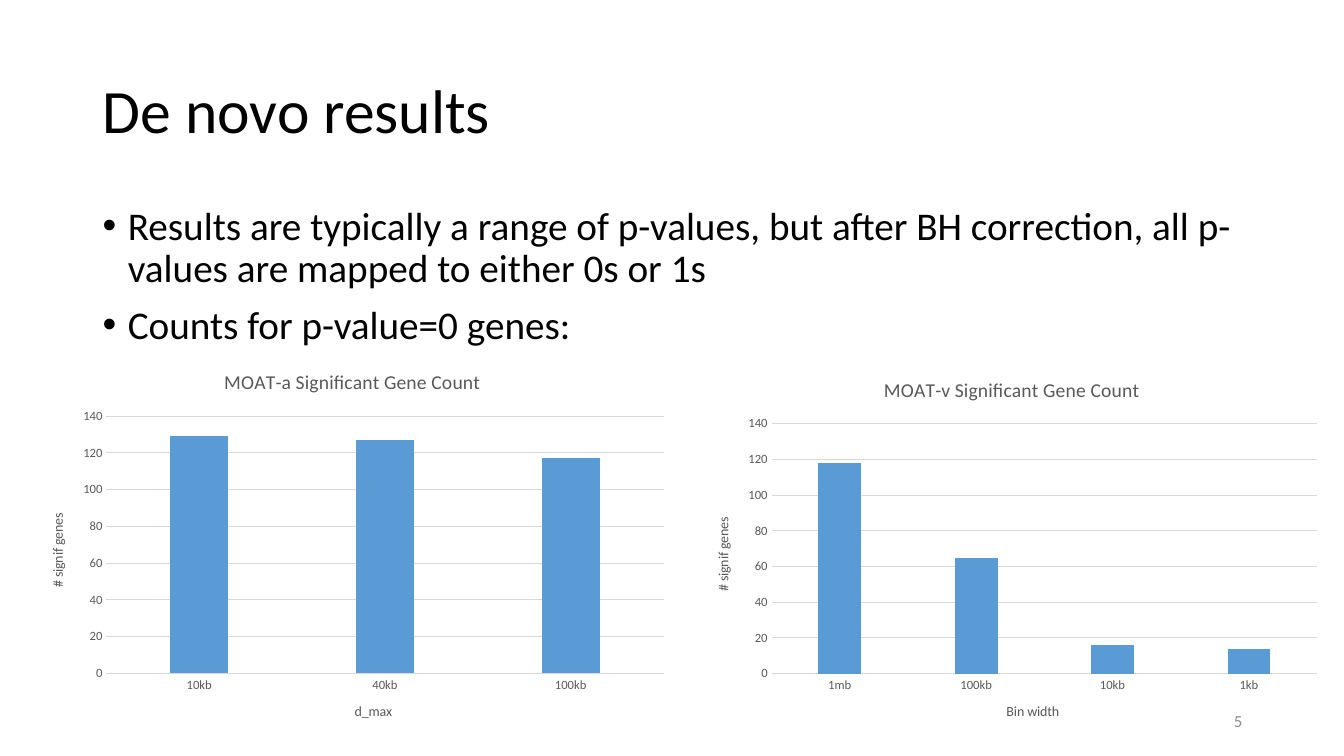
from lxml.etree import SubElement
from pptx import Presentation
from pptx.chart.data import CategoryChartData
from pptx.dml.color import RGBColor
from pptx.enum.chart import XL_CHART_TYPE, XL_TICK_MARK
from pptx.enum.text import MSO_ANCHOR, MSO_AUTO_SIZE, PP_ALIGN
from pptx.oxml.ns import qn
from pptx.util import Inches, Pt

FONT = "Calibri"
BLACK = RGBColor(0x00, 0x00, 0x00)
NUMBER_GRAY = RGBColor(0x8C, 0x8C, 0x8C)
CHART_TEXT = RGBColor(0x59, 0x59, 0x59)
GRID_GRAY = RGBColor(0xD9, 0xD9, 0xD9)
BAR_BLUE = RGBColor(0x5B, 0x9B, 0xD5)

BULLETS = [
    "Results are typically a range of p-values, but after BH correction, "
    "all p-values are mapped to either 0s or 1s",
    "Counts for p-value=0 genes:",
]


def style_font(font, size, color):
    font.name = FONT
    font.size = Pt(size)
    font.bold = False
    font.color.rgb = color


def style_line(line):
    line.color.rgb = GRID_GRAY
    line.width = Pt(0.75)


def place(shape, left, top, width, height):
    shape.left, shape.top = Inches(left), Inches(top)
    shape.width, shape.height = Inches(width), Inches(height)


def set_title(slide, text):
    title = slide.shapes.title
    place(title, 0.92, 0.4, 11.5, 1.45)
    frame = title.text_frame
    frame.text = text
    frame.auto_size = MSO_AUTO_SIZE.NONE
    frame.vertical_anchor = MSO_ANCHOR.MIDDLE
    paragraph = frame.paragraphs[0]
    paragraph.alignment = PP_ALIGN.LEFT
    paragraph.line_spacing = 0.9
    style_font(paragraph.font, 44, BLACK)


def add_text_frame(slide, left, top, width, height):
    box = slide.shapes.add_textbox(
        Inches(left), Inches(top), Inches(width), Inches(height))
    box.text_frame.word_wrap = True
    return box.text_frame


def add_bullets(slide, items):
    frame = add_text_frame(slide, 0.92, 2, 11.5, 4.76)
    for index, item in enumerate(items):
        paragraph = frame.add_paragraph() if index else frame.paragraphs[0]
        paragraph.text = item
        paragraph.line_spacing = 0.9
        paragraph.space_before = Pt(10 if index else 0)
        properties = paragraph._p.get_or_add_pPr()
        properties.set("marL", str(Inches(0.25)))
        properties.set("indent", str(-Inches(0.25)))
        SubElement(properties, qn("a:buFont"), typeface="Arial")
        SubElement(properties, qn("a:buChar"), char="•")
        style_font(paragraph.font, 28, BLACK)


def add_slide_number(slide, number):
    frame = add_text_frame(slide, 9.42, 6.95, 3, 0.4)
    frame.vertical_anchor = MSO_ANCHOR.MIDDLE
    paragraph = frame.paragraphs[0]
    paragraph.text = number
    paragraph.alignment = PP_ALIGN.RIGHT
    style_font(paragraph.font, 12, NUMBER_GRAY)


def set_chart_text(titled, text, size):
    """Give a chart or an axis its title."""
    title = titled.chart_title if hasattr(titled, "chart_title") else titled.axis_title
    paragraph = title.text_frame.paragraphs[0]
    paragraph.text = text
    style_font(paragraph.font, size, CHART_TEXT)


def style_axis(axis, title):
    axis.major_tick_mark = axis.minor_tick_mark = XL_TICK_MARK.NONE
    style_font(axis.tick_labels.font, 9, CHART_TEXT)
    set_chart_text(axis, title, 10)


def add_gene_chart(slide, position, title, category_title, counts):
    data = CategoryChartData()
    data.categories = list(counts)
    data.add_series("Series 1", list(counts.values()))
    chart = slide.shapes.add_chart(
        XL_CHART_TYPE.COLUMN_CLUSTERED, *map(Inches, position), data).chart
    style_font(chart.font, 10, BLACK)
    chart.has_legend = False
    set_chart_text(chart, title, 14)

    style_axis(chart.category_axis, category_title)
    style_line(chart.category_axis.format.line)
    value_axis = chart.value_axis
    style_axis(value_axis, "# signif genes")
    value_axis.format.line.fill.background()
    value_axis.minimum_scale = 0
    value_axis.maximum_scale = 140
    value_axis.major_unit = 20
    style_line(value_axis.major_gridlines.format.line)

    plot = chart.plots[0]
    plot.gap_width = 219
    plot.overlap = -27
    plot.vary_by_categories = False
    fill = plot.series[0].format.fill
    fill.solid()
    fill.fore_color.rgb = BAR_BLUE


def main():
    presentation = Presentation()
    presentation.slide_width = Inches(13.33)
    presentation.slide_height = Inches(7.5)
    slide = presentation.slides.add_slide(
        presentation.slide_layouts.get_by_name("Title Only"))

    set_title(slide, "De novo results")
    add_bullets(slide, BULLETS)
    add_slide_number(slide, "5")
    add_gene_chart(slide, (0.28, 3.49, 6.43, 3.86),
                   "MOAT-a Significant Gene Count", "d_max",
                   {"10kb": 129, "40kb": 127, "100kb": 117})
    add_gene_chart(slide, (6.88, 3.57, 6.31, 3.78),
                   "MOAT-v Significant Gene Count", "Bin width",
                   {"1mb": 118, "100kb": 65, "10kb": 16, "1kb": 14})
    presentation.save("out.pptx")


if __name__ == "__main__":
    main()
